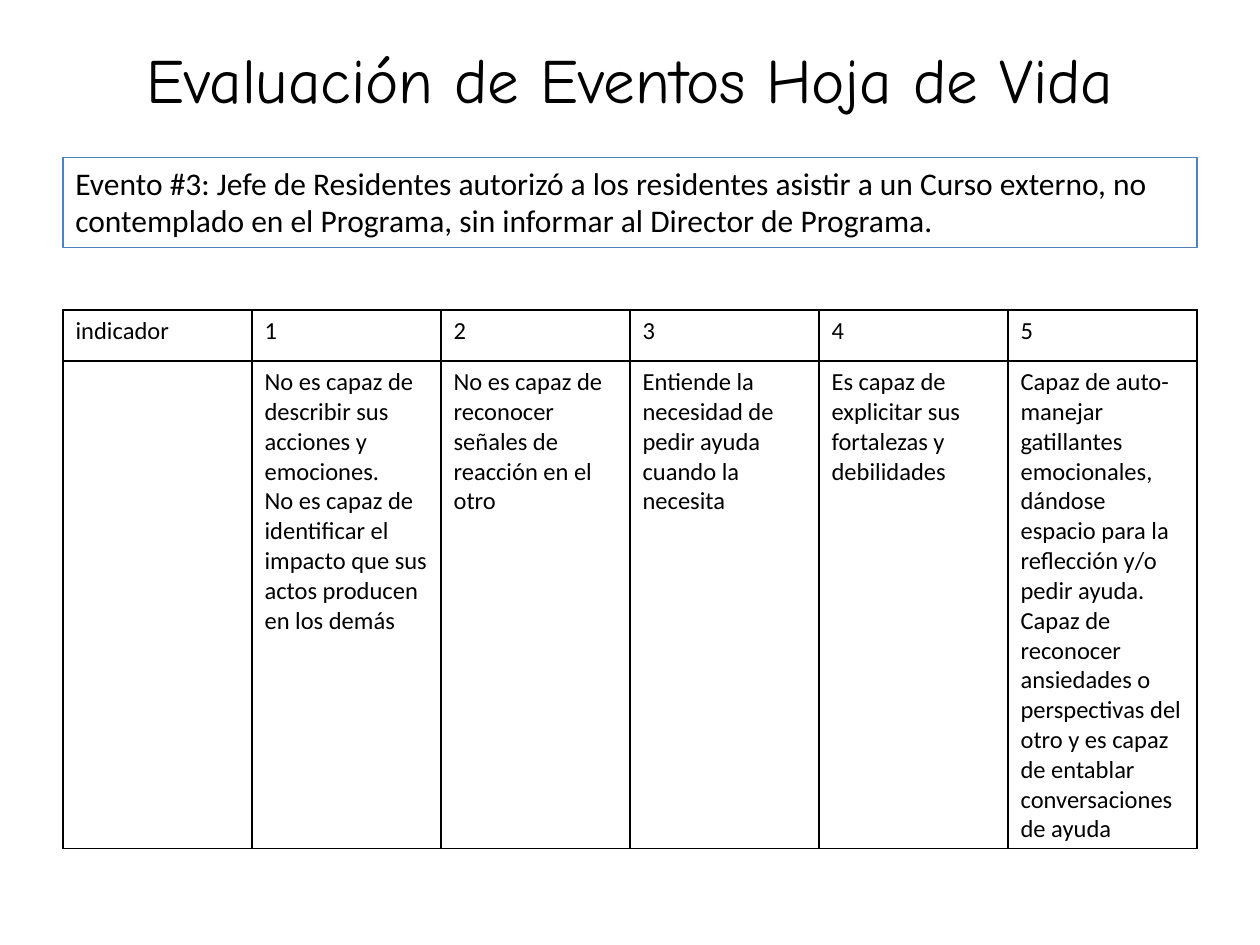
from lxml import etree
from pptx import Presentation, util as u
from pptx.dml.color import RGBColor
from pptx.enum import shapes, text
from pptx.oxml.ns import qn

BLACK = RGBColor(0x00, 0x00, 0x00)
BLUE = RGBColor(0x4F, 0x81, 0xBD)
TITLE_FONT, BODY_FONT = "Comic Neue", "Calibri"
W, H = u.Inches(10), u.Inches(7.5)
MARGIN = W // 20
INNER = W - 2 * MARGIN

TITLE = "Evaluación de Eventos Hoja de Vida"
EVENT = ("Evento #3: Jefe de Residentes autorizó a los residentes asistir a un "
         "Curso externo, no contemplado en el Programa, sin informar al "
         "Director de Programa.")
RUBRIC = [
    [["indicador"], ["1"], ["2"], ["3"], ["4"], ["5"]],
    [
        [],
        ["No es capaz de describir sus acciones y emociones.",
         "No es capaz de identificar el impacto que sus actos producen en los demás"],
        ["No es capaz de reconocer señales de reacción en el otro"],
        ["Entiende la necesidad de pedir ayuda cuando la necesita"],
        ["Es capaz de explicitar sus fortalezas y debilidades"],
        ["Capaz de auto-manejar gatillantes emocionales, dándose espacio para la "
         "reflección y/o pedir ayuda. Capaz de reconocer ansiedades o perspectivas "
         "del otro y es capaz de entablar conversaciones de ayuda"],
    ],
]


def write(tf, lines, font, size, align=text.PP_ALIGN.LEFT):
    """Fill a text frame with one paragraph per line."""
    tf.word_wrap = True
    for i, line in enumerate(lines):
        p = tf.add_paragraph() if i else tf.paragraphs[0]
        p.alignment = align
        r = p.add_run()
        r.text = line
        r.font.name, r.font.size = font, u.Pt(size)
        r.font.color.rgb = BLACK


def border(cell):
    """Draw a thin black line on the four sides of a cell."""
    props = cell._tc.get_or_add_tcPr()
    for i, side in enumerate(("a:lnL", "a:lnR", "a:lnT", "a:lnB")):
        ln = etree.Element(qn(side), w=str(u.Pt(1)))
        fill = etree.SubElement(ln, qn("a:solidFill"))
        etree.SubElement(fill, qn("a:srgbClr"), val=str(BLACK))
        props.insert(i, ln)


def add_title(s, x, y, w, h):
    """Place the centred slide title."""
    tf = s.shapes.add_textbox(x, y, w, h).text_frame
    tf.vertical_anchor = text.MSO_ANCHOR.MIDDLE
    write(tf, [TITLE], TITLE_FONT, 36, text.PP_ALIGN.CENTER)


def add_event(s, x, y, w, h):
    """Place the outlined box describing the event."""
    sp = s.shapes.add_shape(shapes.MSO_SHAPE.RECTANGLE, x, y, w, h)
    sp.shadow.inherit = False
    sp.fill.background()
    sp.line.color.rgb = BLUE
    sp.line.width = u.Pt(0.75)
    tf = sp.text_frame
    tf.vertical_anchor = text.MSO_ANCHOR.TOP
    write(tf, [EVENT], BODY_FONT, 18)
    tf.auto_size = text.MSO_AUTO_SIZE.SHAPE_TO_FIT_TEXT


def add_rubric(s, x, y, w, h):
    """Place the rubric table with a short header row."""
    table = s.shapes.add_table(len(RUBRIC), len(RUBRIC[0]), x, y, w, h).table
    table.first_row = table.horz_banding = False
    table.rows[0].height = round(h * 0.095)
    table.rows[1].height = h - table.rows[0].height
    for row, entries in zip(table.rows, RUBRIC):
        for cell, lines in zip(row.cells, entries):
            cell.fill.background()
            border(cell)
            write(cell.text_frame, lines, BODY_FONT, 14)


def main():
    """Build the slide and save it."""
    prs = Presentation()
    prs.slide_width, prs.slide_height = W, H
    s = prs.slides.add_slide(prs.slide_layouts[6])
    add_title(s, MARGIN, 0, INNER, H // 6)
    add_rubric(s, MARGIN, round(H * 0.328), INNER, round(H * 0.57))
    add_event(s, MARGIN, H // 6, INNER, round(H * 0.095))
    prs.save("out.pptx")


if __name__ == "__main__":
    main()
